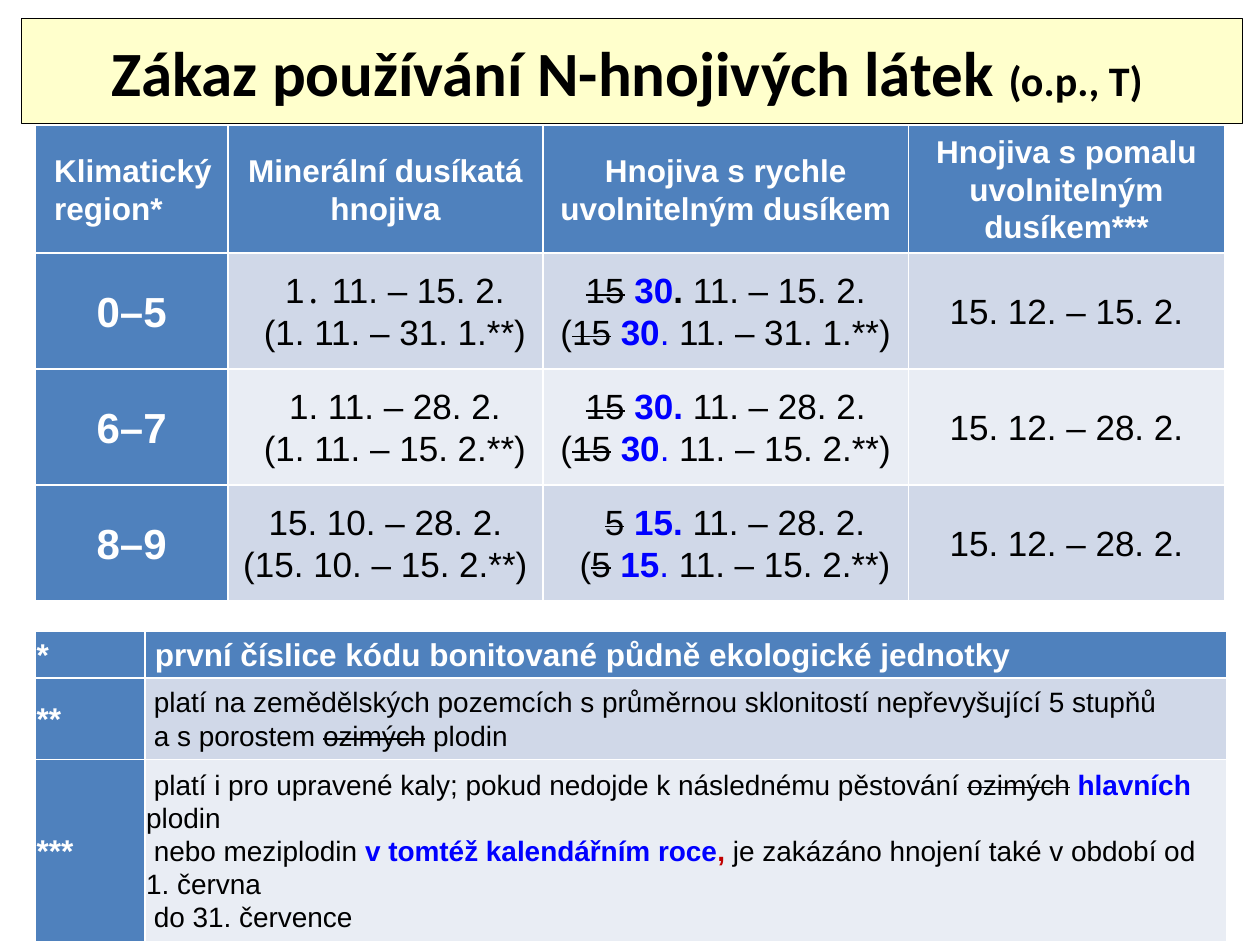
from pptx import Presentation
from pptx.dml.color import RGBColor
from pptx.enum import text
from pptx.util import Inches, Pt

BLUE, BAND, LIGHT = "4F81BD", "D0D8E8", "E9EDF4"
# Run styles: colour, bold, struck through
STYLES = {
    "head": ("FFFFFF", True, False),
    "plain": ("000000", False, False),
    "bold": ("000000", True, False),
    "old": ("000000", False, True),
    "new": ("0000FF", True, False),
    "dot": ("0000FF", False, False),
    "red": ("C00000", True, False),
}


def rgb(value):
    return RGBColor.from_string(value)


def fill_cell(cell, runs, size, fill, align=None, left=0.01):
    cell.fill.solid()
    cell.fill.fore_color.rgb = rgb(fill)
    cell.vertical_anchor = text.MSO_ANCHOR.MIDDLE
    cell.margin_left = Inches(left)
    cell.margin_right = cell.margin_top = cell.margin_bottom = Inches(0.01)
    p = cell.text_frame.paragraphs[0]
    p.alignment = align
    p.line_spacing = 1.07
    p.font.name, p.font.size = "Arial", Pt(size)
    for content, style in runs:
        color, bold, struck = STYLES[style]
        for i, line in enumerate(content.split("\n")):
            if i:
                p.add_line_break()
            if line:
                r = p.add_run()
                r.text = line
                r.font.name, r.font.size = "Arial", Pt(size)
                r.font.bold = bold
                r.font.color.rgb = rgb(color)
                if struck:
                    r.font._element.set("strike", "sngStrike")


prs = Presentation()
prs.slide_width, prs.slide_height = Inches(10), Inches(7.5)
s = prs.slides.add_slide(prs.slide_layouts[5])
CENTER = text.PP_ALIGN.CENTER

# Title bar
title = s.shapes.title
title.left, title.top = Inches(0.17), Inches(0.21)
title.width, title.height = Inches(9.69), Inches(0.71)
title.fill.solid()
title.fill.fore_color.rgb = rgb("FFFFCC")
title.line.color.rgb = rgb("000000")
title.line.width = Pt(0.75)
tf = title.text_frame
tf.auto_size = text.MSO_AUTO_SIZE.SHAPE_TO_FIT_TEXT
tf.vertical_anchor = text.MSO_ANCHOR.MIDDLE
p = tf.paragraphs[0]
p.alignment = CENTER
p.space_before = p.space_after = Pt(12)
for content, size in (("Zákaz používání N-hnojivých látek ", 36), ("(o.p., T) ", 24)):
    r = p.add_run()
    r.text = content
    r.font.name, r.font.size, r.font.bold = "Calibri", Pt(size), True
    r.font.color.rgb = rgb("000000")

# Ban periods by climatic region
periods = s.shapes.add_table(4, 4, Inches(0.28), Inches(0.99), Inches(9.45), Inches(3.78)).table
periods.first_col = True
for col, width in zip(periods.columns, (1.53, 2.5, 2.9, 2.51)):
    col.width = Inches(width)
for row, height in zip(periods.rows, (1.02, 0.92, 0.92, 0.92)):
    row.height = Inches(height)

headers = ["Klimatický\nregion*", "Minerální dusíkatá hnojiva",
           "Hnojiva s rychle uvolnitelným dusíkem",
           "Hnojiva s pomalu uvolnitelným dusíkem***"]
for c, header in enumerate(headers):
    fill_cell(periods.cell(0, c), [(header, "head")], 18, BLUE,
              CENTER if c else None, 0.01 if c else 0.15)

# Region, mineral period, old and new first day, ends (flat, slope), slow period, left insets
regions = [
    ("0–5", "1․ 11. – 15. 2.\n(1. 11. – 31. 1.**)", "15", "30",
     "15. 2.", "31. 1.", "15. 12. – 15. 2.", 0.16, 0.01),
    ("6–7", "1. 11. – 28. 2.\n(1. 11. – 15. 2.**)", "15", "30",
     "28. 2.", "15. 2.", "15. 12. – 28. 2.", 0.16, 0.01),
    ("8–9", "15. 10. – 28. 2.\n(15. 10. – 15. 2.**)", "5", "15",
     "28. 2.", "15. 2.", "15. 12. – 28. 2.", 0.01, 0.16),
]
for n, (region, mineral, old, new, end, end_slope, slow, left1, left2) in enumerate(regions, 1):
    fill = BAND if n % 2 else LIGHT
    first_dot = [(new, "new"), (". ", "bold")] if n == 1 else [(new + ". ", "new")]
    fast = [(old, "old"), (" ", "plain"), *first_dot,
            (f"11. – {end}\n(", "plain"),
            (old, "old"), (" ", "plain"), (new, "new"), (".", "dot"),
            (f" 11. – {end_slope}**)", "plain")]
    fill_cell(periods.cell(n, 0), [(region, "head")], 24, BLUE, CENTER)
    fill_cell(periods.cell(n, 1), [(mineral, "plain")], 20, fill, CENTER, left1)
    fill_cell(periods.cell(n, 2), fast, 20, fill, CENTER, left2)
    fill_cell(periods.cell(n, 3), [(slow, "plain")], 20, fill, CENTER)

# Footnotes
notes = s.shapes.add_table(3, 2, Inches(0.28), Inches(5.01), Inches(9.45), Inches(1.9)).table
notes.first_col = True
for col, width in zip(notes.columns, (0.87, 8.59)):
    col.width = Inches(width)
for row, height in zip(notes.rows, (0.37, 0.65, 0.87)):
    row.height = Inches(height)

footnotes = [
    ([(" první číslice kódu bonitované půdně ekologické jednotky", "head")], 18, BLUE),
    ([(" platí na zemědělských pozemcích s průměrnou sklonitostí nepřevyšující 5 stupňů"
       "\n a s porostem ", "plain"), ("ozimých", "old"), (" plodin", "plain")], 16, BAND),
    ([(" platí i pro upravené kaly; pokud nedojde k následnému pěstování ", "plain"),
      ("ozimých", "old"), (" ", "plain"), ("hlavních ", "new"),
      ("plodin\n nebo meziplodin ", "plain"),
      ("v tomtéž kalendářním roce", "new"), (", ", "red"),
      ("je zakázáno hnojení také v období od 1. června\n do 31. července", "plain")],
     16, LIGHT),
]
for n, (runs, size, fill) in enumerate(footnotes):
    fill_cell(notes.cell(n, 0), [("*" * (n + 1), "head")], 18, BLUE)
    fill_cell(notes.cell(n, 1), runs, size, fill)

prs.save("out.pptx")
